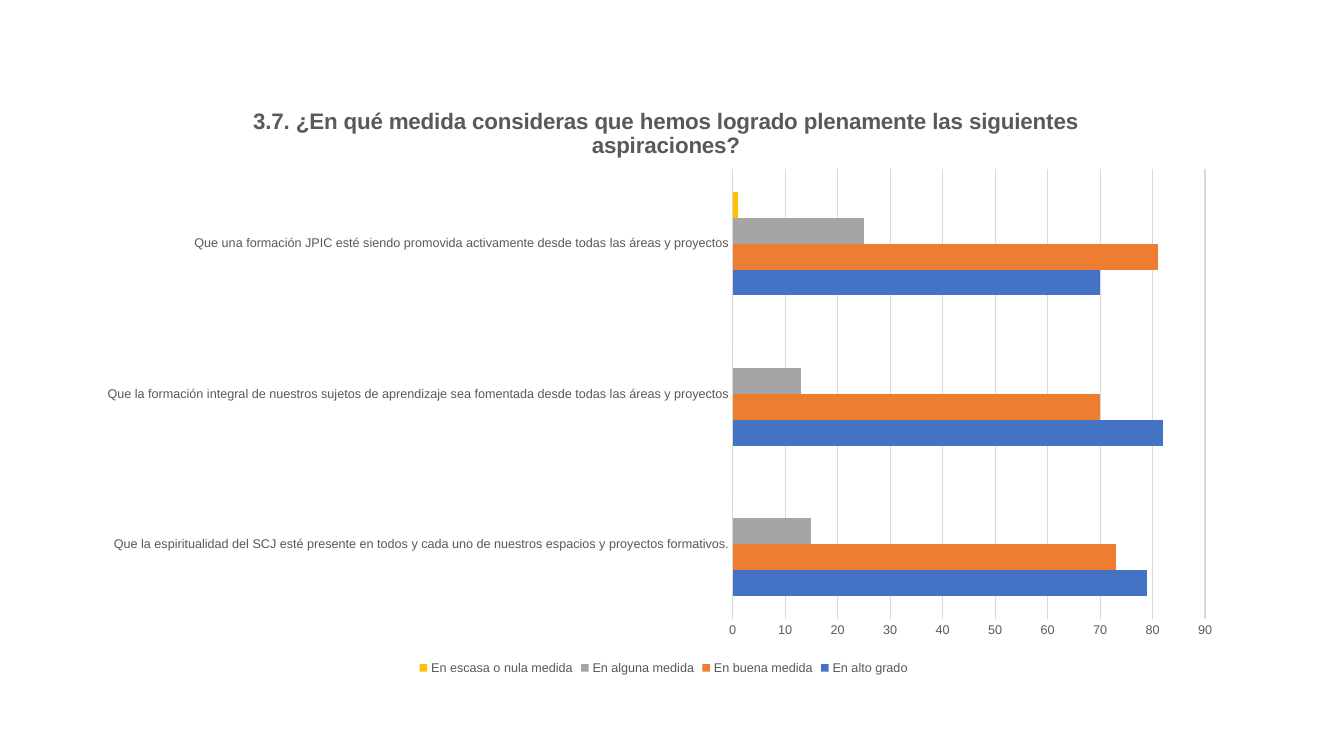
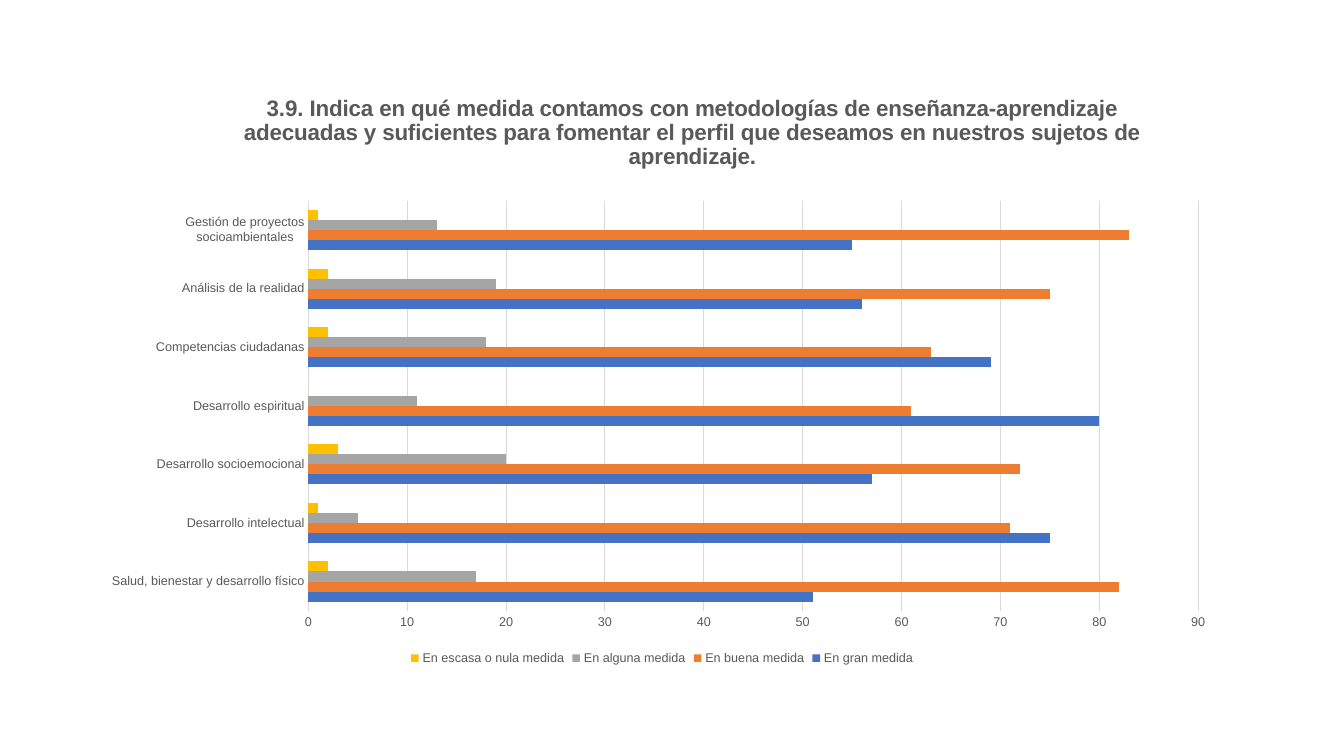
from lxml.etree import SubElement
from pptx import Presentation
from pptx.chart.data import CategoryChartData
from pptx.dml.color import RGBColor
from pptx.enum.chart import XL_CHART_TYPE, XL_LEGEND_POSITION, XL_TICK_MARK
from pptx.oxml import parse_xml
from pptx.oxml.ns import nsdecls, qn
from pptx.util import Cm, Pt

BLUE = RGBColor(0x44, 0x72, 0xC4)
ORANGE = RGBColor(0xED, 0x7D, 0x31)
GRAY = RGBColor(0xA5, 0xA5, 0xA5)
YELLOW = RGBColor(0xFF, 0xC0, 0x00)
TEXT = RGBColor(0x59, 0x59, 0x59)
RULE = RGBColor(0xD9, 0xD9, 0xD9)

LABEL_FORMAT = {"name": "Arial", "size": Pt(9), "bold": False}
TITLE_FORMAT = {"name": "Arial", "size": Pt(16), "bold": True}
VALUE_SCALE = {"minimum_scale": 0, "maximum_scale": 90, "major_unit": 10}
GRADE_COLORS = [BLUE, ORANGE, GRAY, YELLOW]

QUESTIONS = [
    {
        "title": "3.7. ¿En qué medida consideras que hemos logrado plenamente "
                 "las siguientes aspiraciones?",
        "frame": (2.21, 1.98, 29.03, 15.14),
        "title_spot": {"x": 0.14, "y": 0.04},
        "plot_spot": {"x": 0.56, "y": 0.15, "w": 0.41, "h": 0.75},
        "topics": [
            "Que la espiritualidad del SCJ esté presente en todos y cada uno "
            "de nuestros espacios y proyectos formativos.",
            "Que la formación integral de nuestros sujetos de aprendizaje sea "
            "fomentada desde todas las áreas y proyectos",
            "Que una formación JPIC esté siendo promovida activamente desde "
            "todas las áreas y proyectos",
        ],
        "answers": {
            "En alto grado": [79, 82, 70],
            "En buena medida": [73, 70, 81],
            "En alguna medida": [15, 13, 25],
            "En escasa o nula medida": [0, 0, 1],
        },
    },
    {
        "title": "3.9. Indica en qué medida contamos con metodologías de "
                 "enseñanza-aprendizaje adecuadas y suficientes para fomentar "
                 "el perfil que deseamos en nuestros sujetos de aprendizaje.",
        "frame": (2.31, 2.11, 28.75, 14.76),
        "title_spot": {"x": 0.13, "y": 0.01},
        "plot_spot": {"x": 0.19, "y": 0.2, "w": 0.78, "h": 0.7},
        "topics": [
            "Salud, bienestar y desarrollo físico",
            "Desarrollo intelectual",
            "Desarrollo socioemocional",
            "Desarrollo espiritual",
            "Competencias ciudadanas",
            "Análisis de la realidad",
            "Gestión de proyectos socioambientales",
        ],
        "answers": {
            "En gran medida": [51, 75, 57, 80, 69, 56, 55],
            "En buena medida": [82, 71, 72, 61, 63, 75, 83],
            "En alguna medida": [17, 5, 20, 11, 18, 19, 13],
            "En escasa o nula medida": [2, 1, 3, 0, 2, 2, 1],
        },
    },
]


def style_font(font, formats):
    for attribute, value in formats.items():
        setattr(font, attribute, value)
    font.color.rgb = TEXT


def place(part, position, spot, inner=False):
    old_layout = part.find(qn("c:layout"))
    if old_layout is not None:
        part.remove(old_layout)
    layout = parse_xml(f"<c:layout {nsdecls('c')}><c:manualLayout/></c:layout>")
    settings = {"layoutTarget": "inner"} if inner else {}
    settings.update({"xMode": "edge", "yMode": "edge"})
    settings.update(spot)
    for tag, value in settings.items():
        SubElement(layout[0], qn(f"c:{tag}")).set("val", str(value))
    part.insert(position, layout)


deck = Presentation()
deck.slide_width, deck.slide_height = Cm(33.87), Cm(19.05)

for question in QUESTIONS:
    slide = deck.slides.add_slide(deck.slide_layouts[6])
    survey = CategoryChartData()
    survey.categories = question["topics"]
    for grade, counts in question["answers"].items():
        survey.add_series(grade, counts)
    frame = [Cm(length) for length in question["frame"]]
    chart = slide.shapes.add_chart(XL_CHART_TYPE.BAR_CLUSTERED, *frame, survey).chart
    style_font(chart.font, LABEL_FORMAT)

    chart.has_title = True
    heading = chart.chart_title.text_frame
    heading.text = question["title"]
    style_font(heading.paragraphs[0].runs[0].font, TITLE_FORMAT)
    place(chart.chart_title._element, 1, question["title_spot"])
    plot_area = chart._chartSpace.find(qn("c:chart")).find(qn("c:plotArea"))
    place(plot_area, 0, question["plot_spot"], inner=True)

    bars = chart.plots[0]
    bars.gap_width = 182
    bars.vary_by_categories = False
    for grade_bars, color in zip(bars.series, GRADE_COLORS):
        grade_bars.format.fill.solid()
        grade_bars.format.fill.fore_color.rgb = color

    topics, scale = chart.category_axis, chart.value_axis
    for axis in (topics, scale):
        axis.major_tick_mark = axis.minor_tick_mark = XL_TICK_MARK.NONE
        style_font(axis.tick_labels.font, LABEL_FORMAT)
    for attribute, value in VALUE_SCALE.items():
        setattr(scale, attribute, value)
    scale.has_major_gridlines = True
    scale.format.line.fill.background()
    for rule in (topics.format.line, scale.major_gridlines.format.line):
        rule.color.rgb = RULE
        rule.width = Pt(0.75)

    chart.has_legend = True
    chart.legend.position = XL_LEGEND_POSITION.BOTTOM
    chart.legend.include_in_layout = False
    style_font(chart.legend.font, LABEL_FORMAT)

deck.save("out.pptx")
